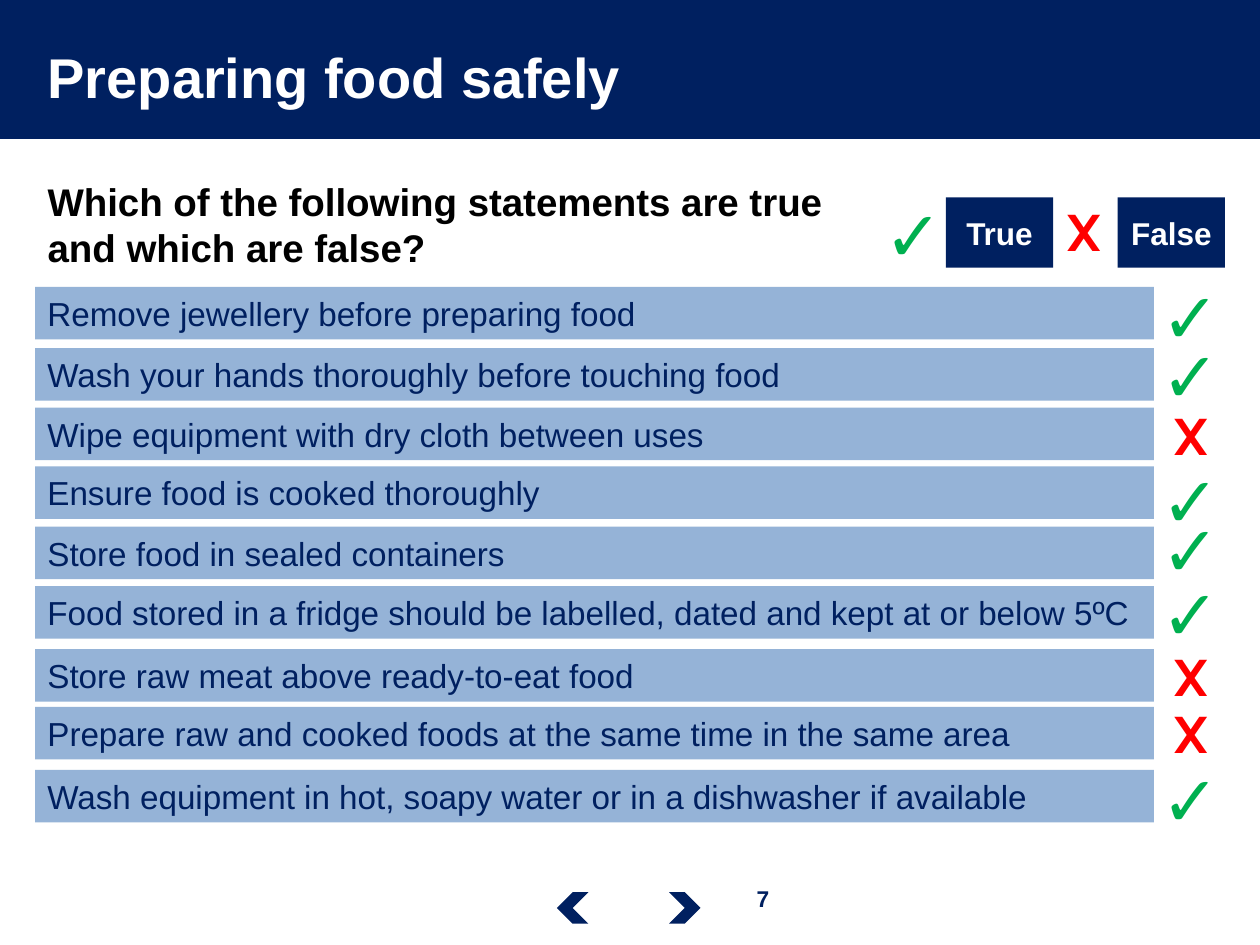
import copy

import pptx
import pptx.dml.color
import pptx.enum.shapes
import pptx.enum.text
import pptx.oxml
import pptx.oxml.ns
import pptx.util

Pt = pptx.util.Pt
RGBColor = pptx.dml.color.RGBColor
Kind = pptx.enum.shapes.MSO_SHAPE
Align = pptx.enum.text.PP_ALIGN
Anchor = pptx.enum.text.MSO_ANCHOR
Fit = pptx.enum.text.MSO_AUTO_SIZE
qn = pptx.oxml.ns.qn

NAVY = RGBColor(0x00, 0x20, 0x60)
BLUE = RGBColor(0x95, 0xB3, 0xD7)
GREEN = RGBColor(0x00, 0xB0, 0x50)
RED = RGBColor(0xFF, 0x00, 0x00)
WHITE = RGBColor(0xFF, 0xFF, 0xFF)
BLACK = RGBColor(0x00, 0x00, 0x00)

# statement, is it true, top of bar, top of mark
ROWS = [
    ("Remove jewellery before preparing food", True, 164, 152.5),
    ("Wash your hands thoroughly before touching food", True, 199, 186.5),
    ("Wipe equipment with dry cloth between uses", False, 233, 229),
    ("Ensure food is cooked thoroughly", True, 266.5, 258),
    ("Store food in sealed containers", True, 301, 286),
    ("Food stored in a fridge should be labelled, dated and kept at or below 5ºC",
     True, 335, 322.5),
    ("Store raw meat above ready-to-eat food", False, 371, 366.5),
    ("Prepare raw and cooked foods at the same time in the same area",
     False, 404, 399),
    ("Wash equipment in hot, soapy water or in a dishwasher if available",
     True, 440, 428.5),
]


class Deck:
    """Holds the style and the current slide; all lengths are in points."""
    font = "Arial"

    def __init__(self, wide, high):
        self.file = pptx.Presentation()
        self.file.slide_width, self.file.slide_height = Pt(wide), Pt(high)
        self.slide = self.file.slides.add_slide(self.file.slide_layouts[1])

    def words(self, shape, text, size, color, bold=True, align=Align.LEFT,
              font=None):
        shape.text_frame.text = text
        para = shape.text_frame.paragraphs[0]
        para.alignment = align
        para.space_before = Pt(0)
        for run in para.runs:
            run.font.name = font or self.font
            run.font.size = Pt(size)
            run.font.bold = bold
            run.font.color.rgb = color
        # A line break carries its own size, which sets the line height
        look = para._p.find(qn("a:r")).find(qn("a:rPr"))
        for line in para._p.findall(qn("a:br")):
            line.append(copy.deepcopy(look))

    def holder(self, index, box, text, size, color, anchor):
        shape = self.slide.placeholders[index]
        shape.left, shape.top, shape.width, shape.height = map(Pt, box)
        frame = shape.text_frame
        frame.auto_size = Fit.NONE
        frame.vertical_anchor = anchor
        self.words(shape, text, size, color)
        props = frame.paragraphs[0]._p.get_or_add_pPr()
        props.set("marL", "0")
        props.set("indent", "0")
        props.append(pptx.oxml.parse_xml(
            '<a:buNone xmlns:a="%s"/>' % pptx.oxml.ns.nsuri("a")))

    def block(self, box, fill, kind=Kind.RECTANGLE):
        shape = self.slide.shapes.add_shape(kind, *map(Pt, box))
        shape.shadow.inherit = False
        shape.fill.solid()
        shape.fill.fore_color.rgb = fill
        shape.line.fill.background()
        return shape

    def label(self, box, fill, text, size, color, **style):
        shape = self.block(box, fill)
        shape.text_frame.vertical_anchor = Anchor.MIDDLE
        self.words(shape, text, size, color, **style)

    def note(self, box, text, size, color, wrap=True, font=None):
        shape = self.slide.shapes.add_textbox(*map(Pt, box))
        shape.text_frame.word_wrap = wrap
        shape.text_frame.auto_size = Fit.SHAPE_TO_FIT_TEXT
        self.words(shape, text, size, color, align=Align.CENTER, font=font)

    def mark(self, left, top, right):
        """Draw a tick for a right answer, otherwise a cross."""
        if right:
            self.note((left, top, 42.5, 55.5), "✓", 40, GREEN)
        else:
            self.note((left, top, 31.7, 41), "X", 28, RED, wrap=False,
                      font="TeX Gyre Adventor")

    def banner(self, box, fill):
        """Draw a bar behind everything else."""
        node = self.block(box, fill).element
        node.getparent().insert(2, node)


def main():
    deck = Deck(720, 540)
    deck.banner((-1.5, 0, 721.5, 79.4), NAVY)
    deck.holder(0, (20, 7.2, 569, 72.7), "Preparing food safely",
                32, WHITE, Anchor.MIDDLE)
    deck.holder(1, (20, 98, 648, 62),
                "Which of the following statements are true \vand which are false?",
                22, BLACK, Anchor.TOP)

    deck.note((410.5, 502, 51, 23), "7", 13, NAVY)
    deck.block((382.3, 509.8, 18, 18), NAVY, Kind.CHEVRON)
    deck.block((318.2, 509.8, 18, 18), NAVY, Kind.CHEVRON).rotation = 180

    for text, _, top, _ in ROWS:
        deck.label((20, top, 639.4, 30), BLUE, text, 19, NAVY, bold=False)
    for _, right, _, top in ROWS:
        deck.mark(656.7 if right else 664, top, right)

    for left, text in ((638.7, "False"), (540.5, "True")):
        deck.label((left, 112.8, 61.3, 40.2), NAVY, text, 18, WHITE,
                   align=Align.CENTER)
    deck.mark(498.2, 105.8, True)
    deck.mark(602.8, 112.3, False)

    deck.file.save("out.pptx")


if __name__ == "__main__":
    main()
